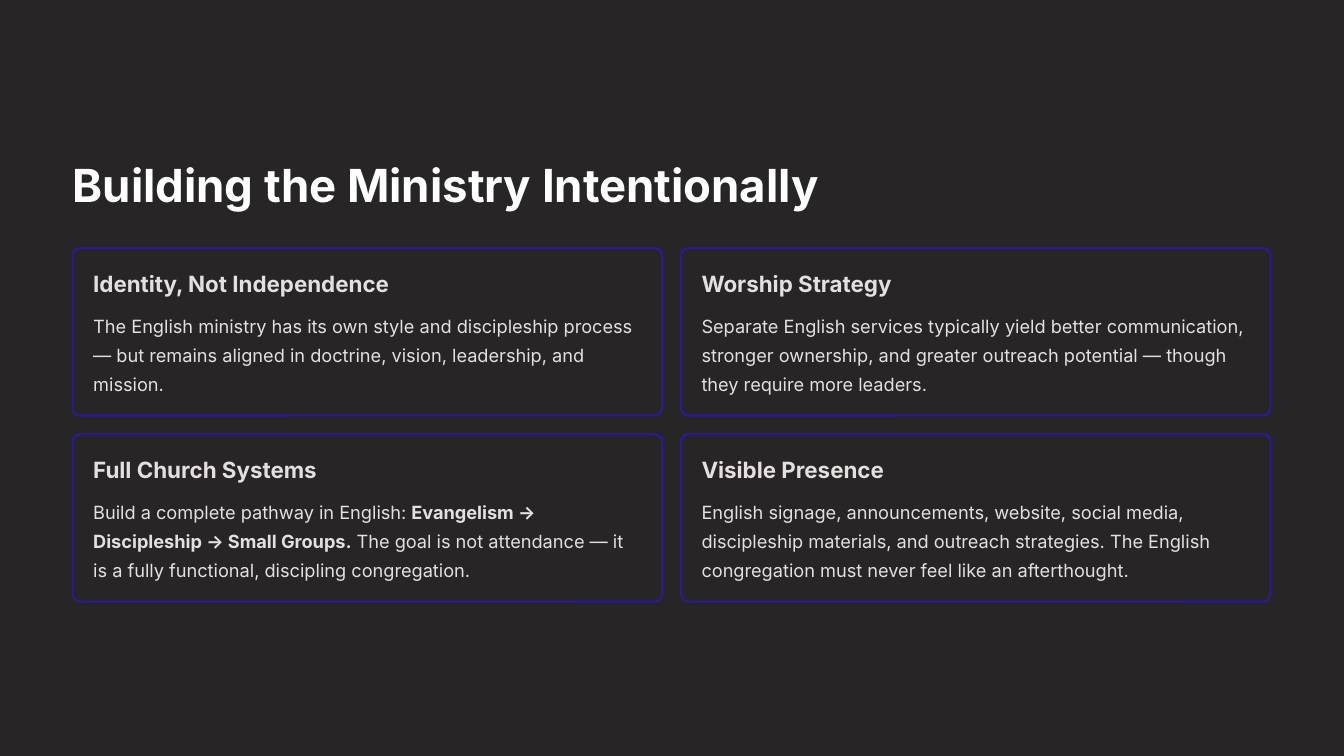
from pptx import Presentation
from pptx.dml.color import RGBColor
from pptx.enum.shapes import MSO_SHAPE
from pptx.enum.text import MSO_ANCHOR, MSO_AUTO_SIZE, PP_ALIGN
from pptx.util import Cm, Pt

ROUNDED_RECTANGLE = MSO_SHAPE.ROUNDED_RECTANGLE
TOP = MSO_ANCHOR.TOP
NO_AUTOFIT = MSO_AUTO_SIZE.NONE
LEFT = PP_ALIGN.LEFT

BACKGROUND = RGBColor(0x27, 0x25, 0x25)
BORDER = RGBColor(0x2A, 0x19, 0x99)
WHITE = RGBColor(0xFF, 0xFF, 0xFF)
LIGHT = RGBColor(0xE5, 0xE0, 0xDF)

MARGIN_LEFT, GRID_TOP = 1.83, 6.25
CARD_WIDTH, CARD_HEIGHT, GAP = 14.86, 4.22, 0.47
PADDING, BODY_OFFSET = 0.52, 1.51
TEXT_WIDTH = CARD_WIDTH - 2 * PADDING

# Body pieces alternate between regular and bold
CARDS = [
    ("Identity, Not Independence",
     ["The English ministry has its own style and discipleship process — but remains "
      "aligned in doctrine, vision, leadership, and mission."]),
    ("Worship Strategy",
     ["Separate English services typically yield better communication, stronger "
      "ownership, and greater outreach potential — though they require more leaders."]),
    ("Full Church Systems",
     ["Build a complete pathway in English: ",
      "Evangelism → Discipleship → Small Groups.",
      " The goal is not attendance — it is a fully functional, discipling congregation."]),
    ("Visible Presence",
     ["English signage, announcements, website, social media, discipleship materials, "
      "and outreach strategies. The English congregation must never feel like an "
      "afterthought."]),
]


def format_text(shape, size, color, line_spacing, wrap):
    text_frame = shape.text_frame
    text_frame.margin_left = text_frame.margin_right = 0
    text_frame.margin_top = text_frame.margin_bottom = 0
    text_frame.vertical_anchor = TOP
    text_frame.auto_size = NO_AUTOFIT
    text_frame.word_wrap = wrap
    paragraph = text_frame.paragraphs[0]
    paragraph.alignment = LEFT
    paragraph.line_spacing = line_spacing
    for run in paragraph.runs:
        run.font.name = "Inter"
        run.font.size = Pt(size)
        run.font.color.rgb = color


presentation = Presentation()
presentation.slide_width = Cm(33.87)
presentation.slide_height = Cm(19.05)
slide = presentation.slides.add_slide(presentation.slide_layouts[5])
slide.background.fill.solid()
slide.background.fill.fore_color.rgb = BACKGROUND

title = slide.shapes.title
title.left, title.top, title.width, title.height = Cm(MARGIN_LEFT), Cm(3.89), Cm(20.55), Cm(1.45)
title.text_frame.text = "Building the Ministry Intentionally"
format_text(title, 32.5, WHITE, 1.04, False)
title.text_frame.paragraphs[0].runs[0].font.bold = True

for index, (heading, body_pieces) in enumerate(CARDS):
    row, column = divmod(index, 2)
    left = MARGIN_LEFT + column * (CARD_WIDTH + GAP)
    top = GRID_TOP + row * (CARD_HEIGHT + GAP)

    card = slide.shapes.add_shape(
        ROUNDED_RECTANGLE, Cm(left), Cm(top), Cm(CARD_WIDTH), Cm(CARD_HEIGHT))
    card.adjustments[0] = 0.046
    card.shadow.inherit = False
    card.fill.solid()
    card.fill.fore_color.rgb = BACKGROUND
    card.line.color.rgb = BORDER
    card.line.width = Pt(1.5)

    heading_box = slide.shapes.add_textbox(
        Cm(left + PADDING), Cm(top + PADDING), Cm(7.6), Cm(0.71))
    heading_box.text_frame.text = heading
    format_text(heading_box, 16, LIGHT, 1.04, False)
    heading_box.text_frame.paragraphs[0].runs[0].font.bold = True

    body_box = slide.shapes.add_textbox(
        Cm(left + PADDING), Cm(top + BODY_OFFSET), Cm(TEXT_WIDTH), Cm(2.21))
    body_paragraph = body_box.text_frame.paragraphs[0]
    for piece_index, piece in enumerate(body_pieces):
        run = body_paragraph.add_run()
        run.text = piece
        run.font.bold = piece_index % 2 == 1
    format_text(body_box, 13, LIGHT, 1.33, True)

presentation.save("out.pptx")
